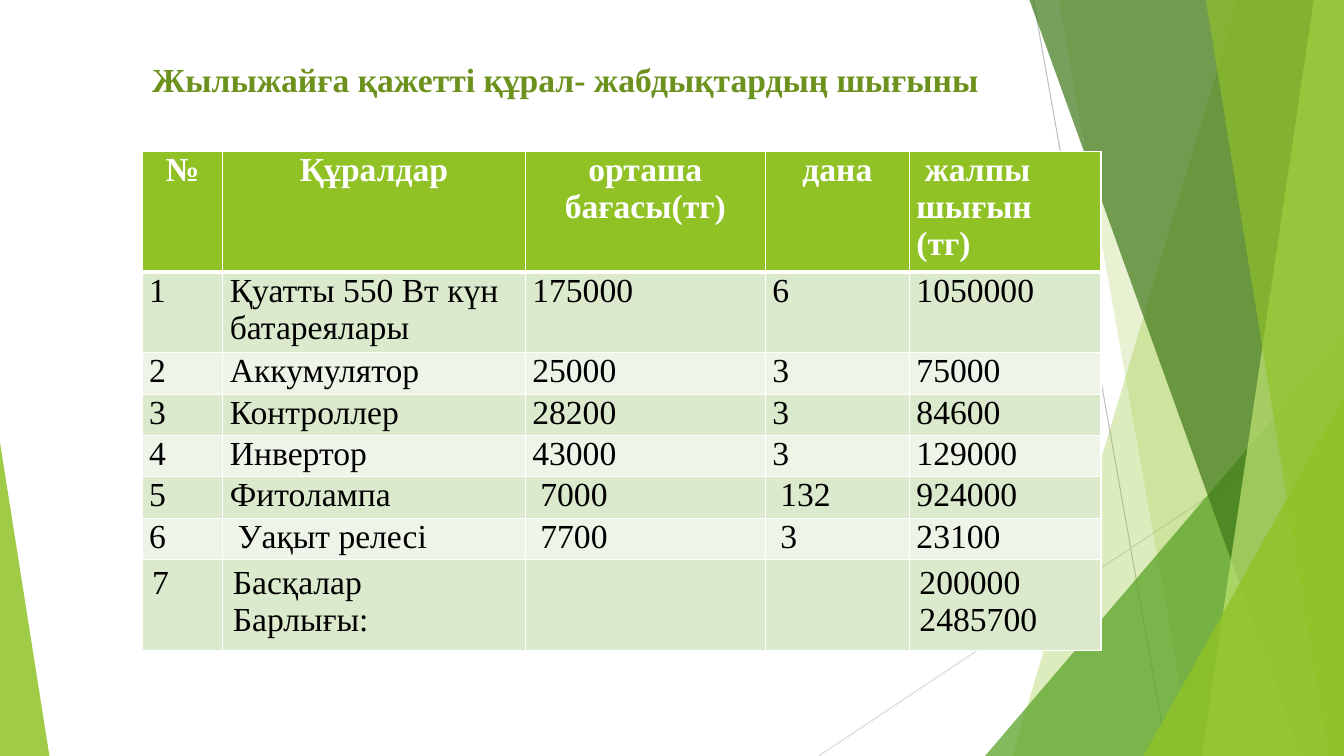
"""Build the slide with the greenhouse equipment cost table."""
from dataclasses import dataclass

from lxml import etree
from pptx import Presentation
from pptx.dml.color import RGBColor
from pptx.enum import shapes, text
from pptx.oxml import ns
from pptx.util import Inches, Pt

COLORS = {
    "lime": "90C226", "green": "54A021", "forest": "3F7819", "pale": "C0E474",
    "title": "6C921D", "band": "DBE9CD", "light": "EEF4E8", "white": "FFFFFF",
    "black": "000000", "gray": "BFBFBF", "silver": "D9D9D9",
}
FONT = "Times New Roman"
WIDTH, HEIGHT = 13.33, 7.5
COLUMNS = [0.8, 3.0, 2.38, 1.43, 1.9]
ROWS = [1.18, 0.8] + [0.41] * 5 + [0.9]
DATA = [
    ["№", "Құралдар", "орташа бағасы(тг)", "дана", "жалпы шығын (тг)"],
    ["1", "Қуатты 550 Вт күн батареялары", "175000", "6", "1050000"],
    ["2", "Аккумулятор", "25000", "3", "75000"],
    ["3", "Контроллер", "28200", "3", "84600"],
    ["4", "Инвертор", "43000", "3", "129000"],
    ["5", "Фитолампа", "7000", "132", "924000"],
    ["6", "Уақыт релесі", "7700", "3", "23100"],
    ["7", "Басқалар\nБарлығы:", "", "", "200000\n2485700"],
]
INDENTED = {(0, 4), (5, 2), (5, 3), (6, 1), (6, 2), (6, 3)}


@dataclass(frozen=True)
class Ray:
    """A thin straight line."""
    start: tuple[float, float]
    end: tuple[float, float]
    color: str


@dataclass(frozen=True)
class Facet:
    """A translucent full-height panel, given by its corners."""
    points: tuple[tuple[float, float], ...]
    color: str
    opacity: int


@dataclass(frozen=True)
class Wedge:
    """A translucent triangle standing on the bottom edge."""
    left: float
    top: float
    width: float
    apex: float
    color: str
    opacity: int


def panel(top_left: float, bottom_left: float, color: str, opacity: int) -> Facet:
    """Return a facet reaching the right edge of the slide."""
    points = ((top_left, 0), (WIDTH, 0), (WIDTH, HEIGHT), (bottom_left, HEIGHT))
    return Facet(points, color, opacity)


DECORATION = [
    Ray((10.25, 0), (11.58, HEIGHT), "gray"),
    Ray((WIDTH, 4.03), (8.12, HEIGHT), "silver"),
    panel(12.28, 10.04, "lime", 30),
    panel(10.5, 11.83, "lime", 20),
    Wedge(9.77, 3.33, 3.56, 1, "green", 72),
    panel(10.21, 12.91, "forest", 70),
    panel(13.03, 11.92, "pale", 70),
    panel(11.96, 13.18, "lime", 65),
    Wedge(11.34, 3.93, 1.99, 1, "lime", 80),
    Wedge(0, 4.39, 0.49, 0, "lime", 85),
]


def rgb(name: str) -> RGBColor:
    """Return the named colour."""
    return RGBColor.from_string(COLORS[name])


def tint(shape, color: str, opacity: int) -> None:
    """Fill a shape with a translucent colour, without line or shadow."""
    shape.shadow.inherit = False
    shape.line.fill.background()
    shape.fill.solid()
    shape.fill.fore_color.rgb = rgb(color)
    node = shape.fill._xPr.find(".//" + ns.qn("a:srgbClr"))
    etree.SubElement(node, ns.qn("a:alpha"), val=str(opacity * 1000))


def draw_ray(page, ray: Ray) -> None:
    """Draw a thin line."""
    ends = [Inches(value) for value in ray.start + ray.end]
    line = page.shapes.add_connector(shapes.MSO_CONNECTOR.STRAIGHT, *ends)
    line.line.color.rgb = rgb(ray.color)
    line.line.width = Pt(0.75)
    etree.SubElement(line._element.spPr, ns.qn("a:effectLst"))


def draw_facet(page, facet: Facet) -> None:
    """Draw a panel."""
    first, *others = [(Inches(x), Inches(y)) for x, y in facet.points]
    builder = page.shapes.build_freeform(*first)
    builder.add_line_segments(others, close=True)
    tint(builder.convert_to_shape(), facet.color, facet.opacity)


def draw_wedge(page, wedge: Wedge) -> None:
    """Draw a triangle."""
    shape = page.shapes.add_shape(
        shapes.MSO_SHAPE.ISOSCELES_TRIANGLE, Inches(wedge.left), Inches(wedge.top),
        Inches(wedge.width), Inches(HEIGHT - wedge.top))
    shape.adjustments[0] = wedge.apex
    tint(shape, wedge.color, wedge.opacity)


def write(frame, content: str, *, color: str, bold: bool = False,
          align=text.PP_ALIGN.LEFT, indent: float = 0) -> None:
    """Write each line of the text as a formatted paragraph."""
    for number, line in enumerate(content.split("\n")):
        para = frame.add_paragraph() if number else frame.paragraphs[0]
        para.alignment = align
        if indent:
            para._p.get_or_add_pPr().set("indent", str(Inches(indent)))
        span = para.add_run()
        span.text = line
        span.font.name = FONT
        span.font.size = Pt(24)
        span.font.bold = bold
        span.font.color.rgb = rgb(color)


def add_borders(cell, bottom: float) -> None:
    """Give a cell white borders; the bottom width is in points."""
    properties = cell._tc.get_or_add_tcPr()
    for side, width in (("L", 1), ("R", 1), ("T", 1), ("B", bottom)):
        line = etree.SubElement(properties, ns.qn(f"a:ln{side}"), w=str(Pt(width)))
        fill = etree.SubElement(line, ns.qn("a:solidFill"))
        etree.SubElement(fill, ns.qn("a:srgbClr"), val=COLORS["white"])


def draw_table(page) -> None:
    """Draw the cost table."""
    frame = page.shapes.add_table(
        len(ROWS), len(COLUMNS), Inches(1.41), Inches(1.5),
        Inches(sum(COLUMNS)), Inches(sum(ROWS)))
    table = frame.table
    for column, width in zip(table.columns, COLUMNS):
        column.width = Inches(width)
    for r, (row, height) in enumerate(zip(table.rows, ROWS)):
        row.height = Inches(height)
        header = r == 0
        for c, cell in enumerate(row.cells):
            if r < len(ROWS) - 1:
                cell.margin_left = cell.margin_right = Inches(0.07)
                cell.margin_top = cell.margin_bottom = 0
            add_borders(cell, 3 if header else 1)
            cell.fill.solid()
            cell.fill.fore_color.rgb = rgb("lime" if header else "band" if r % 2 else "light")
            centred = header and c < len(COLUMNS) - 1
            write(cell.text_frame, DATA[r][c], bold=header,
                  color="white" if header else "black",
                  align=text.PP_ALIGN.CENTER if centred else text.PP_ALIGN.LEFT,
                  indent=0.08 if (r, c) in INDENTED else 0)


def draw_title(page) -> None:
    """Place and format the title."""
    title = page.shapes.title
    title.left, title.top = Inches(1.41), Inches(0.53)
    title.width, title.height = Inches(8.48), Inches(0.5)
    frame = title.text_frame
    frame.word_wrap = False
    frame.auto_size = text.MSO_AUTO_SIZE.SHAPE_TO_FIT_TEXT
    frame.vertical_anchor = text.MSO_ANCHOR.TOP
    write(frame, "Жылыжайға қажетті құрал- жабдықтардың шығыны",
          color="title", bold=True)


def main() -> None:
    """Build and save the deck."""
    deck = Presentation()
    deck.slide_width, deck.slide_height = Inches(WIDTH), Inches(HEIGHT)
    page = deck.slides.add_slide(deck.slide_layouts[5])
    painters = {Ray: draw_ray, Facet: draw_facet, Wedge: draw_wedge}
    for item in DECORATION:
        painters[type(item)](page, item)
    draw_title(page)
    draw_table(page)
    deck.save("out.pptx")


if __name__ == "__main__":
    main()
